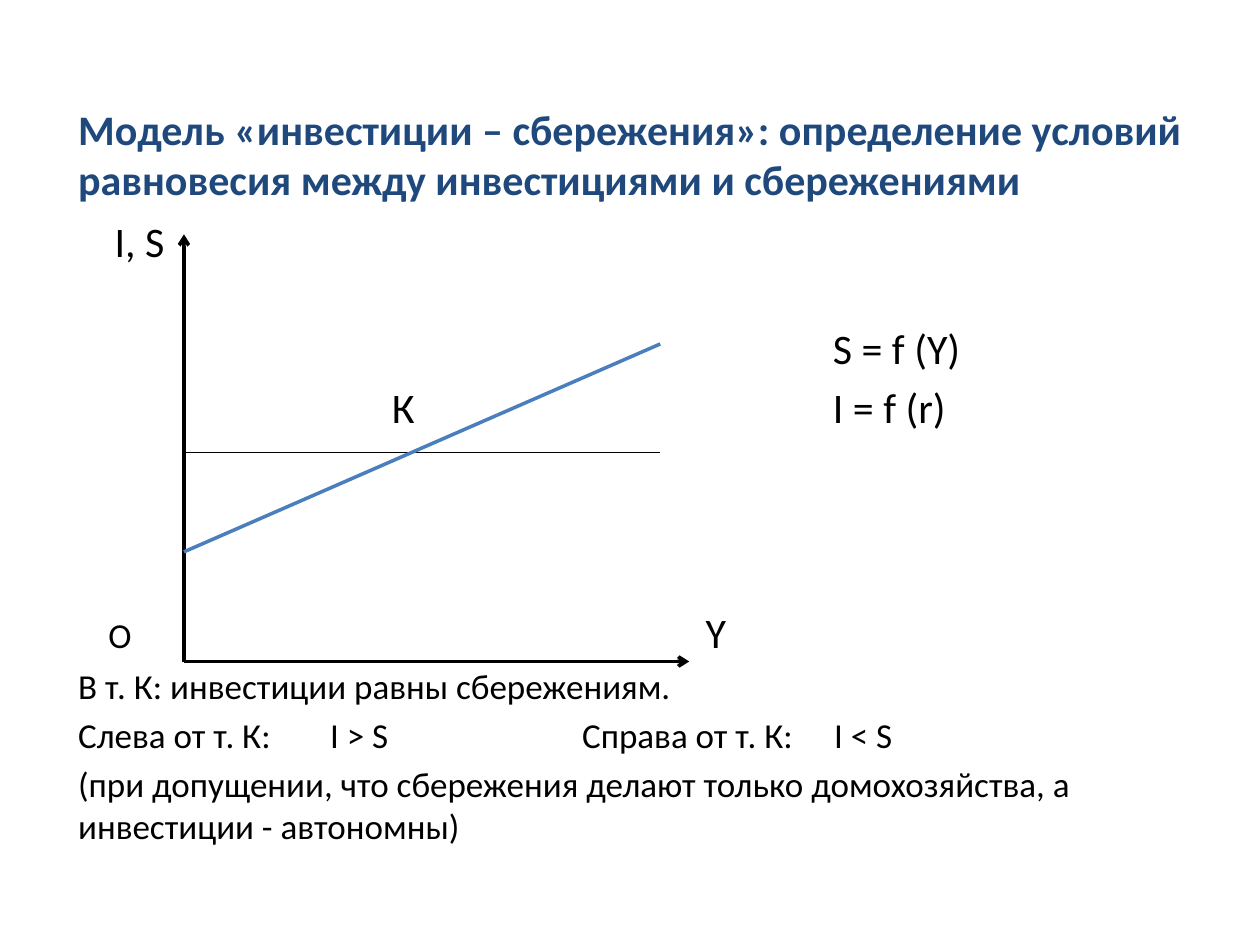
from dataclasses import dataclass
from itertools import chain

from lxml import etree
from pptx import Presentation
from pptx.dml.color import RGBColor
from pptx.enum import shapes, text
from pptx.oxml.ns import qn
from pptx.util import Inches, Pt


@dataclass(frozen=True)
class Theme:
    font: str = "Calibri"
    heading: str = "1F497D"
    ink: str = "000000"
    savings: str = "4B7EBC"
    large: int = 24
    body: int = 20
    axis_width: float = 2
    thin_width: float = 0.75


@dataclass(frozen=True)
class Label:
    wording: str
    left: float
    top: float
    size: int


@dataclass(frozen=True)
class Line:
    start: tuple[float, float]
    end: tuple[float, float]
    color: str
    width: float
    arrow: bool = False


THEME = Theme()
MARGIN, CONTENT_WIDTH = 0.62, 8.82
ORIGIN_X, ORIGIN_Y, CURVE_END = 1.46, 5.25, 5.24
ORIGIN = (ORIGIN_X, ORIGIN_Y)
FORMULA_LEFT = 6.61

LINES = [
    Line(ORIGIN, (ORIGIN_X, 1.86), THEME.ink, THEME.axis_width, arrow=True),
    Line(ORIGIN, (5.47, ORIGIN_Y), THEME.ink, THEME.axis_width, arrow=True),
    Line((ORIGIN_X, 3.59), (CURVE_END, 3.59), THEME.ink, THEME.thin_width),
    Line((ORIGIN_X, 4.38), (CURVE_END, 2.73), THEME.savings, THEME.axis_width),
]
LABELS = [
    Label("I, S", 0.91, 1.71, THEME.large),
    Label("К", 3.11, 3.03, THEME.large),
    Label("О", 0.86, 4.87, THEME.body),
    Label("Y", 5.6, 4.81, THEME.large),
    Label("S = f (Y)", FORMULA_LEFT, 2.56, THEME.large),
    Label("I = f (r)", FORMULA_LEFT, 3.03, THEME.large),
]
HEADING = ("Модель «инвестиции – сбережения»: определение условий "
           "равновесия между инвестициями и сбережениями")
NOTES = [
    "В т. К: инвестиции равны сбережениям.",
    "Слева от т. К:\tI > S\tСправа от т. К:\tI < S",
    "(при допущении, что сбережения делают только домохозяйства, "
    "а инвестиции - автономны)",
]
NOTE_TABS = (2, 4, 6)


def write(frame, paragraphs: list[str], *, size: int, color: str = THEME.ink,
          bold: bool = False, wrap: bool = True, gap: float = 0,
          tabs: tuple[float, ...] = ()) -> None:
    """Fill a text frame; gap is the space in points between paragraphs."""
    frame.margin_left = frame.margin_right = 0
    frame.margin_top = frame.margin_bottom = 0
    frame.word_wrap = wrap
    frame.auto_size = text.MSO_AUTO_SIZE.NONE
    frame.vertical_anchor = text.MSO_ANCHOR.TOP
    for index, wording in enumerate(paragraphs):
        paragraph = frame.add_paragraph() if index else frame.paragraphs[0]
        paragraph.alignment = text.PP_ALIGN.LEFT
        paragraph.space_before = Pt(gap if index else 0)
        if tabs:
            tab_list = etree.SubElement(paragraph._p.get_or_add_pPr(), qn("a:tabLst"))
            for position in tabs:
                etree.SubElement(tab_list, qn("a:tab"),
                                 pos=str(Inches(position)), algn="l")
        run = paragraph.add_run()
        run.text = wording
        run.font.name = THEME.font
        run.font.size = Pt(size)
        run.font.bold = bold
        run.font.color.rgb = RGBColor.from_string(color)


def draw_label(slide, label: Label) -> None:
    box = slide.shapes.add_textbox(Inches(label.left), Inches(label.top),
                                   Inches(0.07 * len(label.wording) + 0.5), Inches(0.41))
    write(box.text_frame, [label.wording], size=label.size, wrap=False)


def draw_line(slide, line: Line) -> None:
    ends = [Inches(value) for value in chain(line.start, line.end)]
    connector = slide.shapes.add_connector(shapes.MSO_CONNECTOR.STRAIGHT, *ends)
    connector.line.color.rgb = RGBColor.from_string(line.color)
    connector.line.width = Pt(line.width)
    if line.arrow:
        etree.SubElement(connector.line._get_or_add_ln(), qn("a:tailEnd"), type="arrow")
    etree.SubElement(connector._element.spPr, qn("a:effectLst"))


def main() -> None:
    presentation = Presentation()
    presentation.slide_width, presentation.slide_height = Inches(10), Inches(7.5)
    slide = presentation.slides.add_slide(presentation.slide_layouts[5])

    heading = slide.shapes.title
    heading.left, heading.top = Inches(MARGIN), Inches(0.82)
    heading.width, heading.height = Inches(CONTENT_WIDTH), Inches(0.85)
    write(heading.text_frame, [HEADING], size=THEME.large,
          color=THEME.heading, bold=True)

    notes = slide.shapes.add_textbox(Inches(MARGIN), Inches(5.27),
                                     Inches(CONTENT_WIDTH), Inches(1.6))
    write(notes.text_frame, NOTES, size=THEME.body, gap=4, tabs=NOTE_TABS)

    for label in LABELS:
        draw_label(slide, label)
    for line in LINES:
        draw_line(slide, line)
    presentation.save("out.pptx")


if __name__ == "__main__":
    main()
